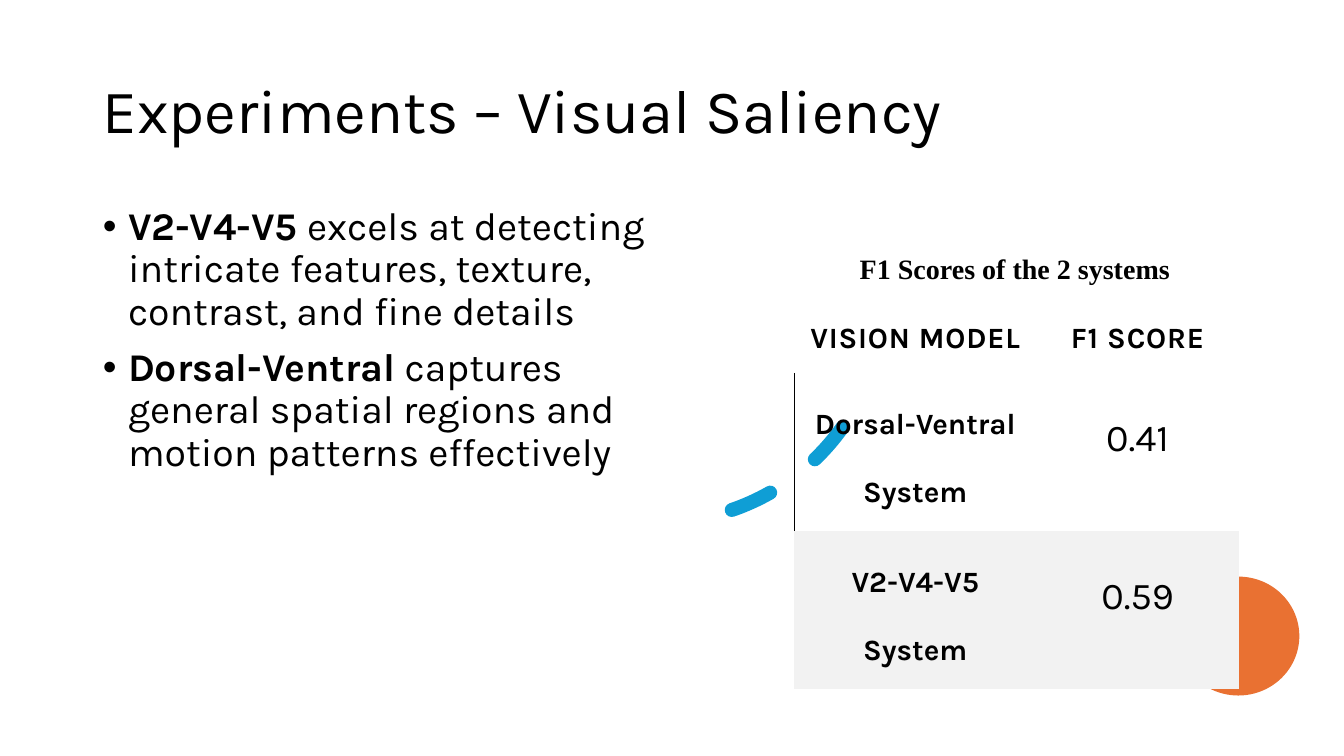
from lxml.etree import SubElement
from pptx import Presentation
from pptx.dml.color import RGBColor
from pptx.enum.dml import MSO_LINE
from pptx.enum.shapes import MSO_SHAPE
from pptx.enum.text import MSO_ANCHOR, MSO_AUTO_SIZE, PP_ALIGN
from pptx.oxml import parse_xml
from pptx.oxml.ns import nsdecls, qn
from pptx.util import Inches, Pt

WIDE, TALL = Inches(13.33), Inches(7.5)
BLACK = RGBColor(0x00, 0x00, 0x00)
BLUE = RGBColor(0x0F, 0x9E, 0xD5)
ORANGE = RGBColor(0xE9, 0x71, 0x32)
GREY = RGBColor(0xF2, 0xF2, 0xF2)
FACE = "Karla"
PLAIN = "{2D5ABB26-0587-4C30-8999-92F81FD0307C}"
POINTS = [
    ("V2-V4-V5", " excels at detecting intricate features, texture, contrast, and fine details"),
    ("Dorsal-Ventral", " captures general spatial regions and motion patterns effectively"),
]
SCORES = [
    ("VISION MODEL", "F1 SCORE"),
    ("Dorsal-Ventral System", "0.41"),
    ("V2-V4-V5 System", "0.59"),
]
COLS = (2.4, 2.01)
ROWS = (1.68, 1.51, 1.51)


def area(left, top, width, height):
    """Turn percentages of the slide into a box."""
    return (int(WIDE * left / 100), int(TALL * top / 100),
            int(WIDE * width / 100), int(TALL * height / 100))


def place(shape, box):
    """Move a shape into its box."""
    shape.left, shape.top, shape.width, shape.height = box


def style(para, size, bold=None, face=FACE):
    """Set the font of a paragraph."""
    font = para.font
    font.name, font.size, font.bold = face, Pt(size), bold
    font.color.rgb = BLACK


def add_arc(slide, box):
    """Draw the dashed arc behind the text."""
    arc = slide.shapes.add_shape(MSO_SHAPE.ARC, *box)
    arc.shadow.inherit = False
    arc.adjustments[0], arc.adjustments[1] = 97.2, 120.56
    arc.rotation = 233.1
    arc.element.spPr.find(qn("a:xfrm")).set("flipV", "1")
    arc.fill.background()
    arc.line.color.rgb = BLUE
    arc.line.width = Pt(10)
    arc.line.dash_style = MSO_LINE.DASH
    arc.element.spPr.find(qn("a:ln")).set("cap", "rnd")
    slide.shapes.element.insert(2, arc.element)


def add_title(slide, box):
    """Fill the title placeholder."""
    title = slide.shapes.title
    place(title, box)
    frame = title.text_frame
    frame.text = "Experiments – Visual Saliency"
    frame.vertical_anchor = MSO_ANCHOR.MIDDLE
    frame.auto_size = MSO_AUTO_SIZE.NONE
    para = frame.paragraphs[0]
    para.alignment = PP_ALIGN.LEFT
    para.line_spacing = 0.9
    style(para, 44)


def add_points(slide, box):
    """Fill the body placeholder with the bulleted findings."""
    body = slide.placeholders[1]
    place(body, box)
    frame = body.text_frame
    frame.auto_size = MSO_AUTO_SIZE.NONE
    for i, (name, rest) in enumerate(POINTS):
        para = frame.add_paragraph() if i else frame.paragraphs[0]
        para.line_spacing = 0.9
        para.space_before = Pt(10)
        style(para, 28)
        props = para._p.get_or_add_pPr()
        props.set("marL", str(Inches(0.25)))
        props.set("indent", str(Inches(-0.25)))
        lead = para.add_run()
        lead.text, lead.font.bold = name, True
        para.add_run().text = rest


def add_disc(slide, box):
    """Draw the orange disc in the corner."""
    disc = slide.shapes.add_shape(MSO_SHAPE.OVAL, *box)
    disc.shadow.inherit = False
    disc.fill.solid()
    disc.fill.fore_color.rgb = ORANGE
    disc.line.fill.background()


def add_label(slide, box):
    """Write the heading of the table."""
    frame = slide.shapes.add_textbox(*box).text_frame
    frame.word_wrap = False
    para = frame.paragraphs[0]
    para.text = "F1 Scores of the 2 systems"
    para.space_after = Pt(6)
    style(para, 20, True, "Times New Roman")


def fill_cell(cell, text, head, size, bold):
    """Write one table cell."""
    cell.margin_left = cell.margin_right = Inches(0.13)
    cell.margin_top = Inches(0.17 if head else 0)
    cell.margin_bottom = Inches(0.17)
    cell.vertical_anchor = MSO_ANCHOR.BOTTOM if head else MSO_ANCHOR.TOP
    cell.fill.background()
    para = cell.text_frame.paragraphs[0]
    para.alignment = PP_ALIGN.CENTER
    para.line_spacing = 2.0
    para.space_after = Pt(8)
    style(para, size, bold)
    run = para.add_run()
    run.text = text
    if head:
        run.font._element.set("spc", "60")


def add_scores(slide, box):
    """Build the table of scores."""
    left, top, width, height = box
    table = slide.shapes.add_table(len(ROWS), len(COLS), *box).table
    table.first_row = table.horz_banding = False
    props = table._tbl.tblPr
    for old in props.findall(qn("a:tableStyleId")):
        props.remove(old)
    SubElement(props, qn("a:tableStyleId")).text = PLAIN
    for col, share in zip(table.columns, COLS):
        col.width = int(width * share / sum(COLS))
    for row, share in zip(table.rows, ROWS):
        row.height = int(height * share / sum(ROWS))
    for r, line in enumerate(SCORES):
        for c, text in enumerate(line):
            value = r > 0 and c > 0
            fill_cell(table.cell(r, c), text, r == 0, 27 if value else 21, not value)
    for cell in table.rows[2].cells:
        cell.fill.solid()
        cell.fill.fore_color.rgb = GREY
    edge = parse_xml(
        f'<a:lnL {nsdecls("a")} w="{Pt(1)}"><a:solidFill>'
        f'<a:srgbClr val="{BLACK}"/></a:solidFill></a:lnL>')
    table.cell(1, 0)._tc.get_or_add_tcPr().insert(0, edge)


def main():
    """Build and save the slide."""
    deck = Presentation()
    deck.slide_width, deck.slide_height = WIDE, TALL
    slide = deck.slides.add_slide(deck.slide_layouts[1])
    add_arc(slide, area(32.25, 9.47, 33.53, 59.6))
    add_title(slide, area(6.9, 5.33, 86.25, 19.33))
    add_points(slide, area(6.9, 26.67, 44.25, 63.47))
    add_disc(slide, area(87.6, 76.27, 9.08, 15.73))
    add_label(slide, area(63.23, 32.67, 24.75, 11.47))
    add_scores(slide, area(59.1, 26.93, 33.08, 62.67))
    deck.save("out.pptx")


if __name__ == "__main__":
    main()
